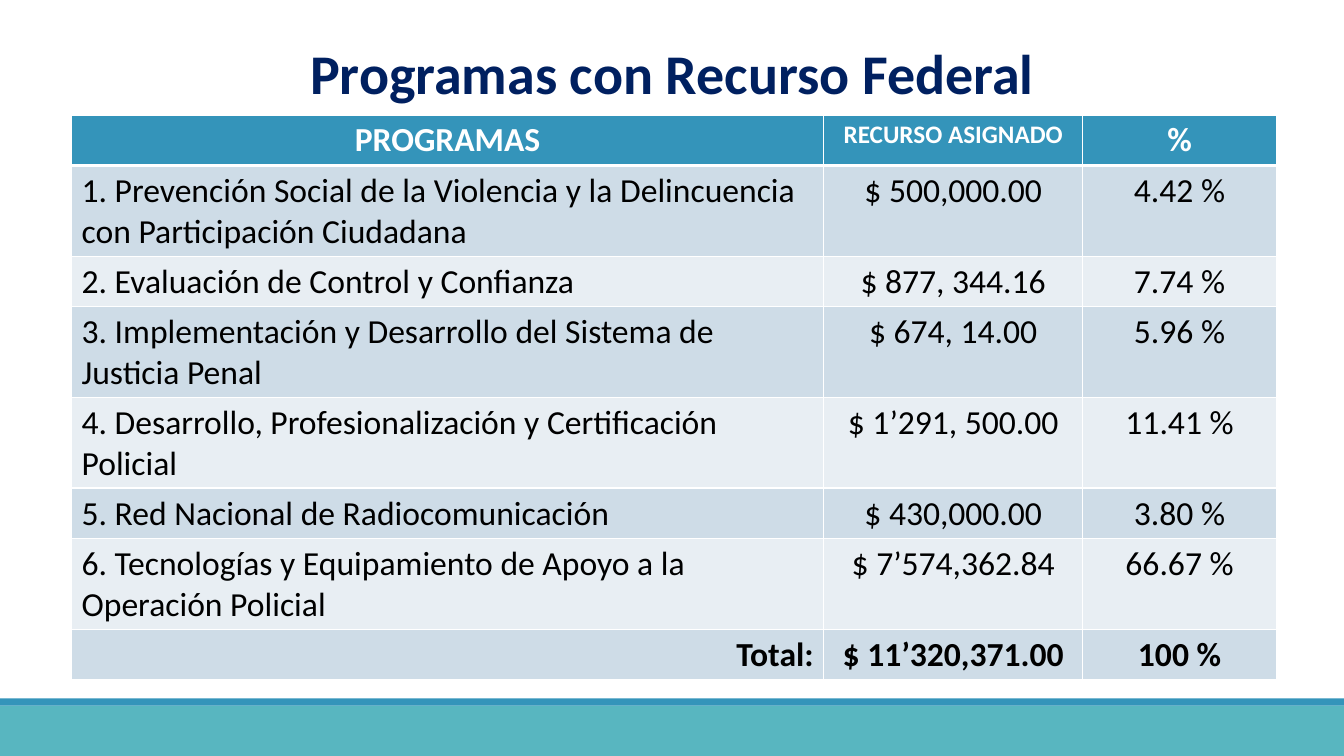
from lxml import etree
from pptx import Presentation
from pptx import util as u
from pptx.dml.color import RGBColor
from pptx.enum import shapes, text
from pptx.oxml.ns import qn

COLORS = {"teal": "58B6C0", "blue": "3494BA", "navy": "002060", "white": "FFFFFF",
          "black": "000000", "band_dark": "CEDCE7", "band_light": "E8EEF3"}
LEFT, CENTER, RIGHT = text.PP_ALIGN.LEFT, text.PP_ALIGN.CENTER, text.PP_ALIGN.RIGHT

presentation = Presentation()
presentation.slide_width, presentation.slide_height = u.Inches(13.33), u.Inches(7.5)
slide = presentation.slides.add_slide(presentation.slide_layouts[6])


def write(frame, wording, color, alignment, **font_format):
    paragraph = frame.paragraphs[0]
    paragraph.alignment = alignment
    run = paragraph.add_run()
    run.text = wording
    run.font.color.rgb = RGBColor.from_string(COLORS[color])
    for name, value in {"name": "Calibri", **font_format}.items():
        setattr(run.font, name, value)


def add_border(cell, side, points):
    line = etree.SubElement(cell._tc.get_or_add_tcPr(), qn(f"a:ln{side}"), w=str(u.Pt(points)))
    fill = etree.SubElement(line, qn("a:solidFill"))
    etree.SubElement(fill, qn("a:srgbClr"), val=COLORS["white"])


# Footer bands
for color, top, height in [("teal", 7, 0.5), ("blue", 6.93, 0.07)]:
    band = slide.shapes.add_shape(shapes.MSO_SHAPE.RECTANGLE, 0, u.Inches(top),
                                  presentation.slide_width, u.Inches(height))
    band.shadow.inherit = False
    band.fill.solid()
    band.fill.fore_color.rgb = RGBColor.from_string(COLORS[color])
    band.line.fill.background()

# Title
title = slide.shapes.add_textbox(0, u.Inches(0.33), presentation.slide_width, u.Inches(0.77))
title.text_frame.word_wrap = True
write(title.text_frame, "Programas con Recurso Federal", "navy", CENTER,
      size=u.Pt(40), bold=True)

# Programme table
rows = [
    ("PROGRAMAS", "RECURSO ASIGNADO", "%"),
    ("1. Prevención Social de la Violencia y la Delincuencia con Participación Ciudadana",
     "$ 500,000.00", "4.42 %"),
    ("2. Evaluación de Control y Confianza", "$ 877, 344.16", "7.74 %"),
    ("3. Implementación y Desarrollo del Sistema de Justicia Penal", "$ 674, 14.00", "5.96 %"),
    ("4. Desarrollo, Profesionalización y Certificación Policial", "$ 1’291, 500.00", "11.41 %"),
    ("5. Red Nacional de Radiocomunicación", "$ 430,000.00", "3.80 %"),
    ("6. Tecnologías y Equipamiento de Apoyo a la Operación Policial",
     "$ 7’574,362.84", "66.67 %"),
    ("Total:", "$ 11’320,371.00", "100 %"),
]
column_widths = [7.46, 2.57, 1.92]
one_line, two_lines = 0.5, 0.9
row_heights = [two_lines if len(row[0]) > 40 else one_line for row in rows]
table = slide.shapes.add_table(len(rows), len(column_widths), u.Inches(0.71), u.Inches(1.14),
                               u.Inches(sum(column_widths)), u.Inches(sum(row_heights))).table
for column, width in zip(table.columns, column_widths):
    column.width = u.Inches(width)

last = len(rows) - 1
for r, row in enumerate(rows):
    table.rows[r].height = u.Inches(row_heights[r])
    header = r == 0
    fill_color = "blue" if header else "band_dark" if r % 2 else "band_light"
    for c, wording in enumerate(row):
        cell = table.cell(r, c)
        for side in "LRTB":
            thick = (header and side == "B") or (r == 1 and side == "T")
            add_border(cell, side, 3 if thick else 1)
        cell.fill.solid()
        cell.fill.fore_color.rgb = RGBColor.from_string(COLORS[fill_color])
        if c or header:
            alignment = CENTER
        else:
            alignment = RIGHT if r == last else LEFT
        write(cell.text_frame, wording, "white" if header else "black", alignment,
              size=u.Pt(18 if header and c == 1 else 24), bold=r in (0, last))

presentation.save("out.pptx")
